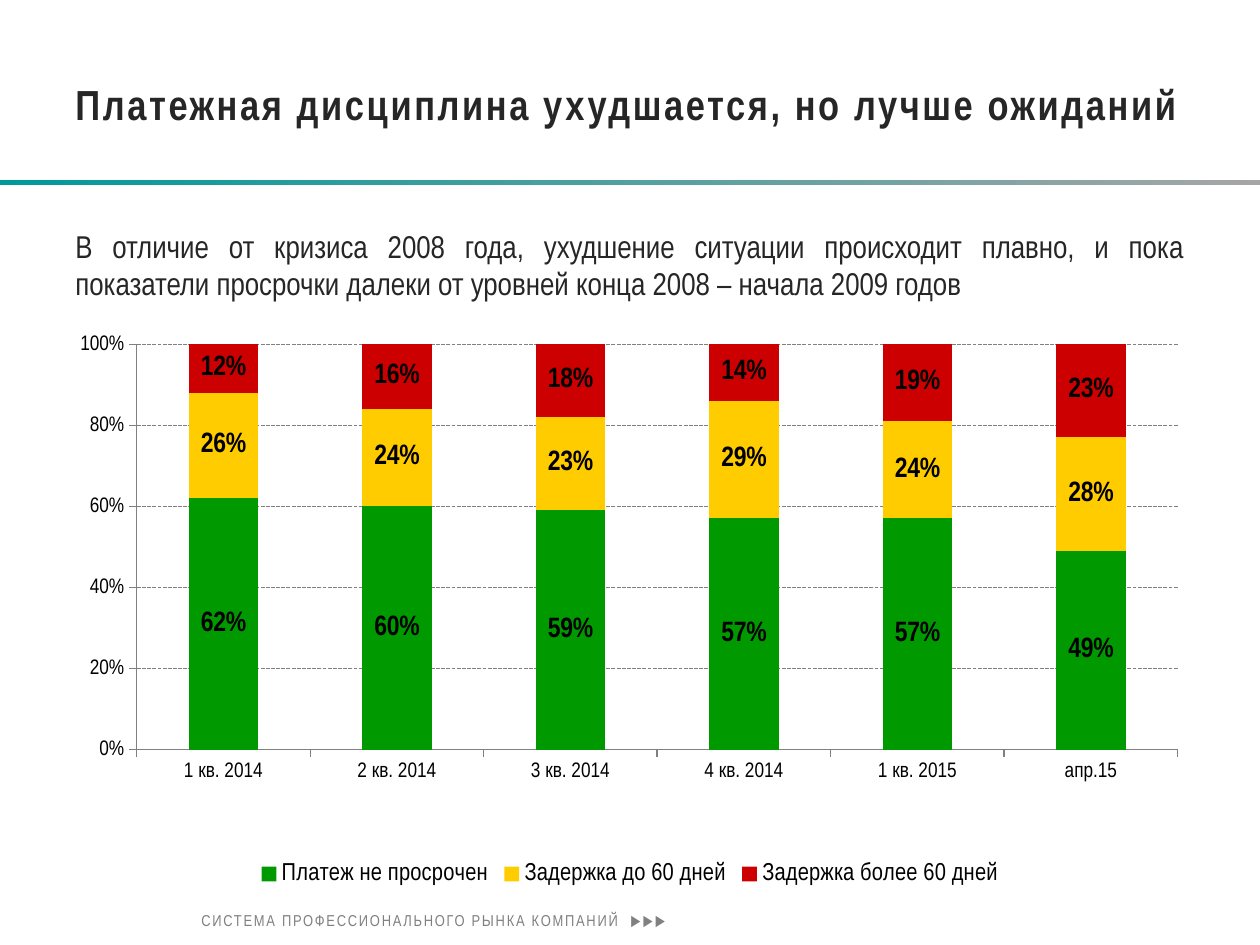
from dataclasses import dataclass

import pptx
import pptx.chart.data
import pptx.dml.color
import pptx.enum.chart
import pptx.enum.dml
import pptx.enum.shapes
import pptx.enum.text
import pptx.oxml
import pptx.oxml.ns
import pptx.util

Inches = pptx.util.Inches
Pt = pptx.util.Pt
RGB = pptx.dml.color.RGBColor.from_string


@dataclass(frozen=True)
class Theme:
    font: str = "Arial Narrow"
    ink: str = "262626"
    black: str = "000000"
    grey: str = "808080"
    rule_start: str = "009999"
    rule_end: str = "A6A6A6"
    title: int = 24
    body: int = 18
    label: int = 16
    legend: int = 14
    axis: int = 12
    footer: int = 9


THEME = Theme()

QUARTERS = ["1 кв. 2014", "2 кв. 2014", "3 кв. 2014", "4 кв. 2014", "1 кв. 2015", "апр.15"]
PAYMENTS = [
    ("Платеж не просрочен", "009900", [0.62, 0.60, 0.59, 0.57, 0.57, 0.49]),
    ("Задержка до 60 дней", "FFCC00", [0.26, 0.24, 0.23, 0.29, 0.24, 0.28]),
    ("Задержка более 60 дней", "CC0000", [0.12, 0.16, 0.18, 0.14, 0.19, 0.23]),
]


def style_font(font, size, color, bold=False):
    font.name = THEME.font
    font.size = Pt(size)
    font.bold = bold
    font.color.rgb = RGB(color)


def add_text(s, box, text, size, color, bold=False, spacing=0, middle=True, justify=False):
    tf = s.shapes.add_textbox(*map(Inches, box)).text_frame
    tf.word_wrap = True
    anchor = pptx.enum.text.MSO_ANCHOR
    tf.vertical_anchor = anchor.MIDDLE if middle else anchor.TOP
    p = tf.paragraphs[0]
    p.text = text
    if justify:
        p.alignment = pptx.enum.text.PP_ALIGN.JUSTIFY
    r = p.runs[0]
    style_font(r.font, size, color, bold)
    if spacing:
        r.font._element.set("spc", str(int(spacing * 100)))


def add_rule(s, box):
    sp = s.shapes.add_shape(pptx.enum.shapes.MSO_SHAPE.RECTANGLE, *map(Inches, box))
    sp.shadow.inherit = False
    sp.line.fill.background()
    sp.fill.gradient()
    sp.fill.gradient_angle = 0
    for stop, color in zip(sp.fill.gradient_stops, (THEME.rule_start, THEME.rule_end)):
        stop.color.rgb = RGB(color)


def set_plot_layout(chart, box):
    plot_area = chart._chartSpace.chart.plotArea
    for old in plot_area.findall(pptx.oxml.ns.qn("c:layout")):
        plot_area.remove(old)
    values = "".join(f'<c:{tag} val="{val}"/>' for tag, val in zip("xywh", box))
    plot_area.insert(0, pptx.oxml.parse_xml(
        f'<c:layout {pptx.oxml.ns.nsdecls("c")}><c:manualLayout>'
        '<c:layoutTarget val="inner"/><c:xMode val="edge"/><c:yMode val="edge"/>'
        f'{values}</c:manualLayout></c:layout>'))


def style_axes(chart):
    for axis in (chart.category_axis, chart.value_axis):
        axis.major_tick_mark = pptx.enum.chart.XL_TICK_MARK.OUTSIDE
        axis.format.line.color.rgb = RGB(THEME.grey)
        axis.format.line.width = Pt(0.75)
        style_font(axis.tick_labels.font, THEME.axis, THEME.black)
    axis = chart.value_axis
    axis.minimum_scale, axis.maximum_scale, axis.major_unit = 0, 1, 0.2
    axis.tick_labels.number_format = "0%"
    axis.tick_labels.number_format_is_linked = False
    grid = axis.major_gridlines.format.line
    grid.color.rgb = RGB(THEME.grey)
    grid.width = Pt(0.75)
    grid.dash_style = pptx.enum.dml.MSO_LINE.SQUARE_DOT


def style_series(series, color):
    series.format.fill.solid()
    series.format.fill.fore_color.rgb = RGB(color)
    labels = series.data_labels
    labels.show_value = True
    labels.number_format = "0%"
    labels.number_format_is_linked = False
    labels.position = pptx.enum.chart.XL_LABEL_POSITION.CENTER
    style_font(labels.font, THEME.label, THEME.black, bold=True)


def add_payment_chart(s, box):
    data = pptx.chart.data.CategoryChartData(number_format="0%")
    data.categories = QUARTERS
    for name, _, values in PAYMENTS:
        data.add_series(name, values)
    chart = s.shapes.add_chart(
        pptx.enum.chart.XL_CHART_TYPE.COLUMN_STACKED, *map(Inches, box), data).chart
    style_font(chart.font, THEME.body, THEME.black)
    chart.has_title = False
    chart.has_legend = True
    chart.legend.position = pptx.enum.chart.XL_LEGEND_POSITION.BOTTOM
    chart.legend.include_in_layout = False
    style_font(chart.legend.font, THEME.legend, THEME.black)
    plot = chart.plots[0]
    plot.gap_width, plot.overlap = 150, 100
    plot.vary_by_categories = False
    for series, (_, color, _) in zip(plot.series, PAYMENTS):
        style_series(series, color)
    style_axes(chart)
    set_plot_layout(chart, (0.065, 0.036, 0.918, 0.715))


def build_slide(prs):
    s = prs.slides.add_slide(prs.slide_layouts[6])
    add_rule(s, (0, 1.43, 10, 0.04))
    add_text(s, (1.5, 7.18, 5.4, 0.24), "СИСТЕМА ПРОФЕССИОНАЛЬНОГО РЫНКА КОМПАНИЙ  ▶▶▶",
             THEME.footer, THEME.grey, spacing=1)
    add_text(s, (0.5, 0.2, 9.22, 1.25), "Платежная дисциплина ухудшается, но лучше ожиданий",
             THEME.title, THEME.ink, bold=True, spacing=1.5)
    add_text(s, (0.5, 1.75, 9, 0.8),
             "В отличие от кризиса 2008 года, ухудшение ситуации происходит плавно, и пока "
             "показатели просрочки далеки от уровней конца 2008 – начала 2009 годов",
             THEME.body, THEME.ink, middle=False, justify=True)
    add_payment_chart(s, (0.5, 2.57, 9, 4.5))


def main():
    prs = pptx.Presentation()
    prs.slide_width, prs.slide_height = Inches(10), Inches(7.5)
    build_slide(prs)
    prs.save("out.pptx")


if __name__ == "__main__":
    main()
